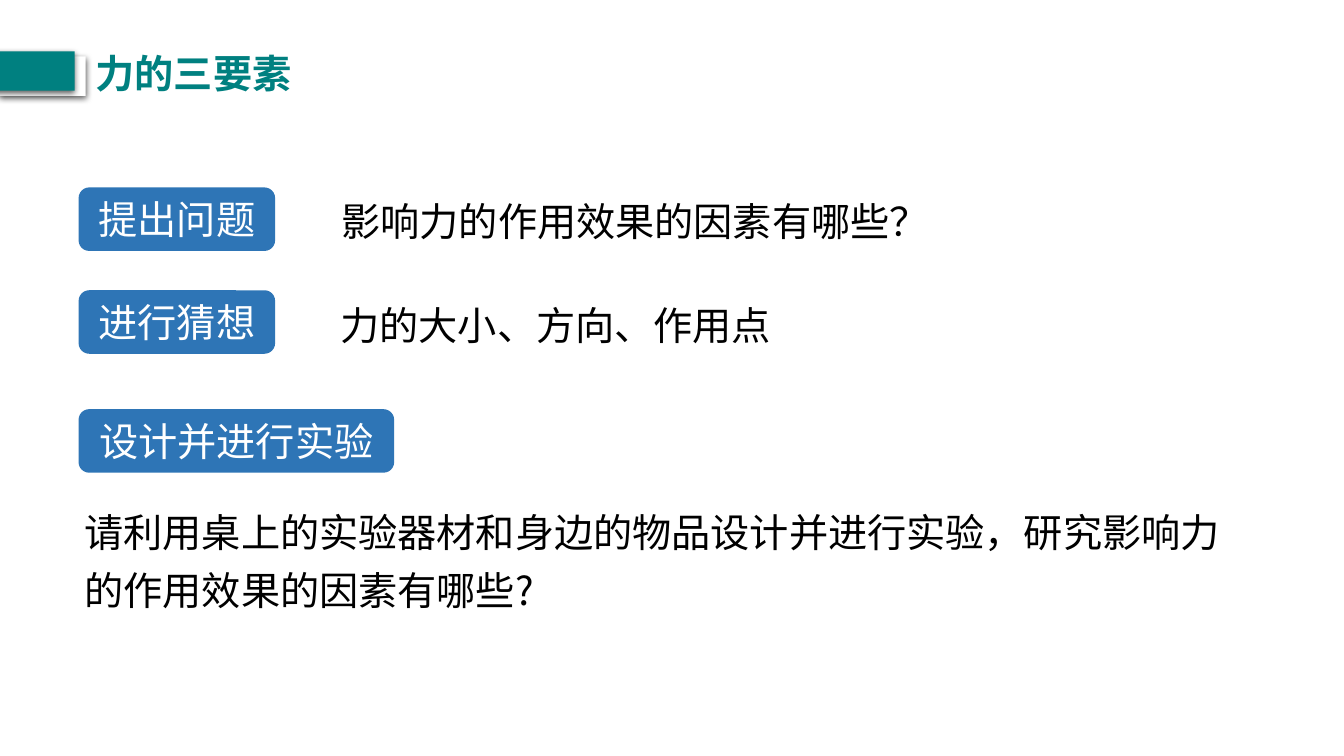
"""Build the lesson slide on the three elements of a force."""
import dataclasses
import typing

import lxml.etree
import pptx
import pptx.dml.color
import pptx.enum.shapes
import pptx.enum.text
import pptx.oxml.ns
import pptx.util

WIDTH = pptx.util.Inches(13.333)
HEIGHT = pptx.util.Inches(7.5)
FONT = "Noto Sans CJK SC"
TEXT_SIZE = pptx.util.Pt(28)
COLOURS = {"teal": "008080", "blue": "2E75B6", "white": "FFFFFF", "black": "000000"}
LABEL_LEFT, LABEL_HEIGHT = 5.85, 8.4
SHORT_LABEL, LONG_LABEL = 14.62, 23.48
BAR_WIDTH, BAR_HEIGHT = 6.38, 5.2
LINE_HEIGHT = 7.6


@dataclasses.dataclass(frozen=True)
class Area:
    """A rectangle in percent of the slide's width and height."""
    left: float
    top: float
    width: float
    height: float

    def lengths(self) -> tuple[int, int, int, int]:
        """Return left, top, width and height in EMU."""
        return (round(self.left * WIDTH / 100), round(self.top * HEIGHT / 100),
                round(self.width * WIDTH / 100), round(self.height * HEIGHT / 100))


@dataclasses.dataclass(frozen=True)
class Label:
    """A rounded step label."""
    text: str
    top: float
    width: float


@dataclasses.dataclass(frozen=True)
class Passage:
    """A piece of free text."""
    text: str
    area: Area
    colour: str = "black"
    bold: bool = False
    wrap: bool = True
    line_spacing: float = 1.0


@dataclasses.dataclass(frozen=True)
class Bar:
    """A shadowed bar beside the title."""
    left: float
    top: float
    colour: str


PASSAGES = (
    Passage("请利用桌上的实验器材和身边的物品设计并进行实验，研究影响力的作用效果的因素有哪些?",
            Area(5.55, 63.33, 86.78, 20.13), line_spacing=1.25),
    Passage("影响力的作用效果的因素有哪些？", Area(24.67, 25.47, 56.55, LINE_HEIGHT)),
    Passage("力的大小、方向、作用点", Area(24.6, 39.2, 33.9, LINE_HEIGHT), wrap=False),
)
LABELS = (
    Label("提出问题", 24.8, SHORT_LABEL),
    Label("进行猜想", 38.4, SHORT_LABEL),
    Label("设计并进行实验", 54.13, LONG_LABEL),
)
BARS = (Bar(0, 7.47, "white"), Bar(-0.83, 6.8, "teal"))
TITLE = Passage("力的三要素", Area(BAR_WIDTH, 5.87, 34.05, LINE_HEIGHT), "teal", bold=True)


def colour_of(name: str) -> pptx.dml.color.RGBColor:
    """Look up a named colour."""
    return pptx.dml.color.RGBColor.from_string(COLOURS[name])


def write_text(shape: typing.Any, text: str, colour: str, bold: bool = False) -> typing.Any:
    """Write one run into a shape and return its paragraph."""
    shape.text_frame.vertical_anchor = pptx.enum.text.MSO_ANCHOR.MIDDLE
    paragraph = shape.text_frame.paragraphs[0]
    run = paragraph.add_run()
    run.text = text
    run.font.size = TEXT_SIZE
    run.font.bold = bold
    run.font.name = FONT
    run.font.color.rgb = colour_of(colour)
    east_asian = lxml.etree.SubElement(run.font._element, pptx.oxml.ns.qn("a:ea"))
    east_asian.set("typeface", FONT)
    return paragraph


def draw_box(shapes: typing.Any, kind: typing.Any, area: Area, colour: str) -> typing.Any:
    """Draw a filled shape without outline or shadow."""
    shape = shapes.add_shape(kind, *area.lengths())
    shape.shadow.inherit = False
    shape.fill.solid()
    shape.fill.fore_color.rgb = colour_of(colour)
    shape.line.fill.background()
    return shape


def draw_passage(shapes: typing.Any, passage: Passage) -> None:
    """Draw free text."""
    box = shapes.add_textbox(*passage.area.lengths())
    box.text_frame.word_wrap = passage.wrap
    paragraph = write_text(box, passage.text, passage.colour, passage.bold)
    paragraph.line_spacing = passage.line_spacing


def draw_label(shapes: typing.Any, label: Label) -> None:
    """Draw a step label."""
    area = Area(LABEL_LEFT, label.top, label.width, LABEL_HEIGHT)
    shape = draw_box(shapes, pptx.enum.shapes.MSO_SHAPE.ROUNDED_RECTANGLE, area, "blue")
    paragraph = write_text(shape, label.text, "white")
    paragraph.alignment = pptx.enum.text.PP_ALIGN.CENTER


def draw_bar(shapes: typing.Any, bar: Bar) -> None:
    """Draw a title bar with a soft shadow below it."""
    area = Area(bar.left, bar.top, BAR_WIDTH, BAR_HEIGHT)
    shape = draw_box(shapes, pptx.enum.shapes.MSO_SHAPE.RECTANGLE, area, bar.colour)
    qualified = pptx.oxml.ns.qn
    effects = shape._element.spPr.find(qualified("a:effectLst"))
    shadow = lxml.etree.SubElement(
        effects, qualified("a:outerShdw"), blurRad=str(pptx.util.Pt(4.5)),
        dist=str(pptx.util.Pt(1.5)), dir=str(90 * 60000), algn="t", rotWithShape="0")
    tint = lxml.etree.SubElement(shadow, qualified("a:srgbClr"), val=COLOURS["black"])
    lxml.etree.SubElement(tint, qualified("a:alpha"), val=str(63 * 1000))


def main() -> None:
    """Build and save the presentation."""
    presentation = pptx.Presentation()
    presentation.slide_width, presentation.slide_height = WIDTH, HEIGHT
    slide = presentation.slides.add_slide(presentation.slide_layouts[6])
    for passage in PASSAGES:
        draw_passage(slide.shapes, passage)
    for label in LABELS:
        draw_label(slide.shapes, label)
    header = slide.shapes.add_group_shape()
    for bar in BARS:
        draw_bar(header.shapes, bar)
    draw_passage(header.shapes, TITLE)
    presentation.save("out.pptx")


if __name__ == "__main__":
    main()
